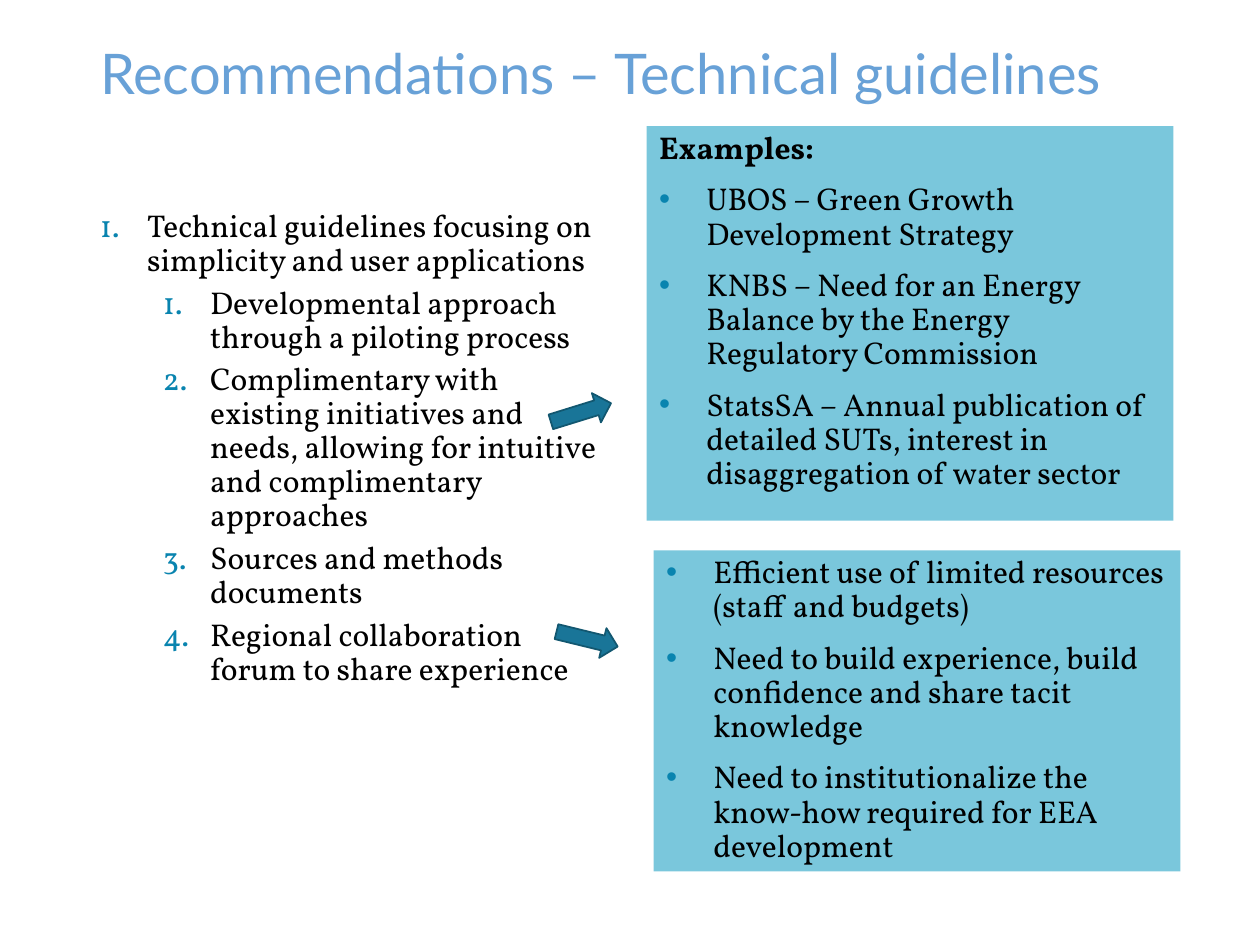
from lxml.etree import SubElement
from pptx import Presentation
from pptx.dml.color import RGBColor
from pptx.enum.shapes import MSO_SHAPE as Shape
from pptx.enum.text import MSO_ANCHOR as Anchor, MSO_AUTO_SIZE as AutoSize, PP_ALIGN as Align
from pptx.oxml.ns import qn
from pptx.util import Pt

TITLE_BLUE = RGBColor(0x68, 0xA1, 0xD7)
MARKER_BLUE = RGBColor(0x09, 0x84, 0xAF)
PANEL_BLUE = RGBColor(0x7A, 0xC7, 0xDC)
ARROW_BLUE = RGBColor(0x19, 0x75, 0x98)
ARROW_EDGE = RGBColor(0x12, 0x57, 0x70)
BLACK = RGBColor(0, 0, 0)

TITLE_FONT = "Lato"
BODY_FONT = "Vollkorn"
COLUMN_WIDTH = 301
HANGING = 27

GUIDELINE = "Technical guidelines focusing on simplicity and user applications"
GUIDELINE_STEPS = [
    "Developmental approach through a piloting process",
    "Complimentary with existing initiatives and needs, allowing for intuitive "
    "and complimentary approaches",
    "Sources and methods documents",
    "Regional collaboration forum to share experience",
]
EXAMPLES = [
    "UBOS – Green Growth Development Strategy",
    "KNBS – Need for an Energy Balance by the Energy Regulatory Commission",
    "StatsSA – Annual publication of detailed SUTs, interest in disaggregation of water sector",
]
BENEFITS = [
    "Efficient use of limited resources (staff and budgets)",
    "Need to build experience, build confidence and share tacit knowledge",
    "Need to institutionalize the know-how required for EEA development",
]


def place(shape, left, top, width, height):
    shape.left, shape.top = Pt(left), Pt(top)
    shape.width, shape.height = Pt(width), Pt(height)


def add_run(paragraph, text, font, size, color, bold=False):
    run = paragraph.add_run()
    run.text = text
    run.font.name = font
    run.font.size = Pt(size)
    run.font.color.rgb = color
    run.font.bold = bold


def set_marker(paragraph, numbered, indent):
    properties = paragraph._p.get_or_add_pPr()
    properties.set("marL", str(Pt(indent)))
    properties.set("indent", str(-Pt(HANGING)))
    color = SubElement(properties, qn("a:buClr"))
    SubElement(color, qn("a:srgbClr"), val=str(MARKER_BLUE))
    if numbered:
        SubElement(properties, qn("a:buFont"), typeface=BODY_FONT)
        SubElement(properties, qn("a:buAutoNum"), type="arabicPeriod")
    else:
        SubElement(properties, qn("a:buFont"), typeface="Arial")
        SubElement(properties, qn("a:buChar"), char="•")


def add_paragraph(frame, text, marker=True, numbered=False, level=0, bold=False):
    is_first = not frame.paragraphs[0].runs
    paragraph = frame.paragraphs[0] if is_first else frame.add_paragraph()
    paragraph.level = level
    if marker:
        set_marker(paragraph, numbered, HANGING + 36 * level)
    paragraph.alignment = Align.LEFT
    paragraph.line_spacing = 0.9
    paragraph.space_before = Pt(0 if is_first else 5 if level else 10)
    add_run(paragraph, text, BODY_FONT, 18, BLACK, bold)


def set_title(slide, text):
    title = slide.shapes.title
    place(title, 50, 18, 625, 46.5)
    frame = title.text_frame
    frame.word_wrap = True
    frame.auto_size = AutoSize.NONE
    frame.vertical_anchor = Anchor.BOTTOM
    paragraph = frame.paragraphs[0]
    paragraph.alignment = Align.LEFT
    paragraph.line_spacing = 0.9
    add_run(paragraph, text, TITLE_FONT, 32, TITLE_BLUE)


def add_guidelines(slide):
    box = slide.shapes.add_textbox(Pt(50), Pt(116.5), Pt(COLUMN_WIDTH), Pt(260.5))
    frame = box.text_frame
    frame.word_wrap = True
    add_paragraph(frame, GUIDELINE, numbered=True)
    for step in GUIDELINE_STEPS:
        add_paragraph(frame, step, numbered=True, level=1)


def add_filled_shape(slide, kind, left, top, width, height, fill):
    shape = slide.shapes.add_shape(kind, Pt(left), Pt(top), Pt(width), Pt(height))
    shape.shadow.inherit = False
    shape.fill.solid()
    shape.fill.fore_color.rgb = fill
    return shape


def add_panel(slide, left, top, height, items, heading=None):
    panel = add_filled_shape(slide, Shape.RECTANGLE, left, top, COLUMN_WIDTH, height, PANEL_BLUE)
    panel.line.fill.background()
    frame = panel.text_frame
    frame.word_wrap = True
    frame.vertical_anchor = Anchor.TOP
    if heading:
        add_paragraph(frame, heading, marker=False, bold=True)
    for item in items:
        add_paragraph(frame, item)


def add_arrow(slide, left, top, rotation):
    arrow = add_filled_shape(slide, Shape.RIGHT_ARROW, left, top, 36, 17.5, ARROW_BLUE)
    arrow.line.color.rgb = ARROW_EDGE
    arrow.line.width = Pt(1)
    arrow.rotation = rotation


def main():
    presentation = Presentation()
    presentation.slide_width, presentation.slide_height = Pt(720), Pt(540)
    slide = presentation.slides.add_slide(presentation.slide_layouts.get_by_name("Title Only"))
    set_title(slide, "Recommendations – Technical guidelines")
    add_guidelines(slide)
    add_panel(slide, 369.5, 72, 225.5, EXAMPLES, heading="Examples:")
    add_panel(slide, 373.5, 314.5, 183.5, BENEFITS)
    add_arrow(slide, 314, 227, 342.8)
    add_arrow(slide, 317.5, 356.5, 13.7)
    presentation.save("out.pptx")


if __name__ == "__main__":
    main()
